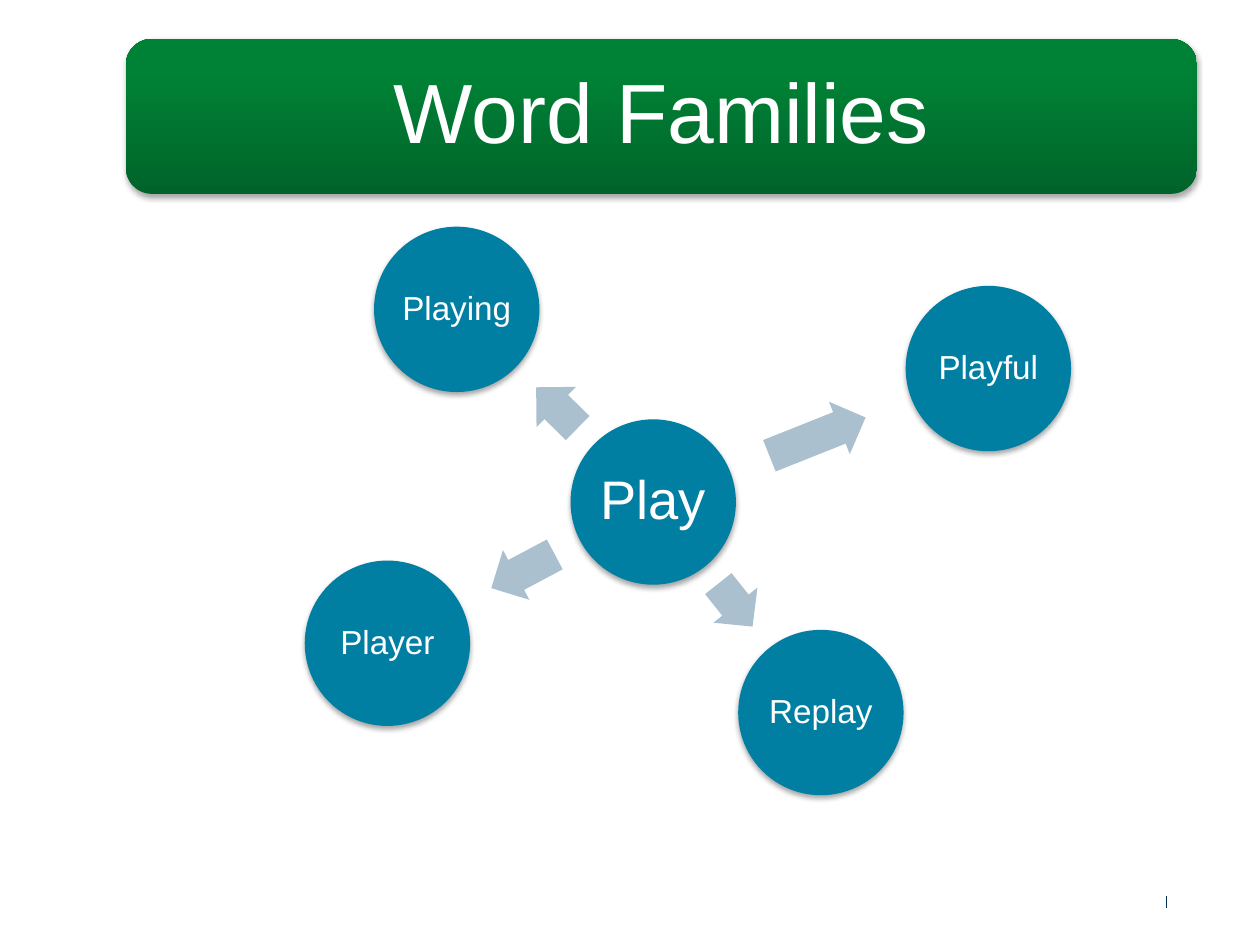
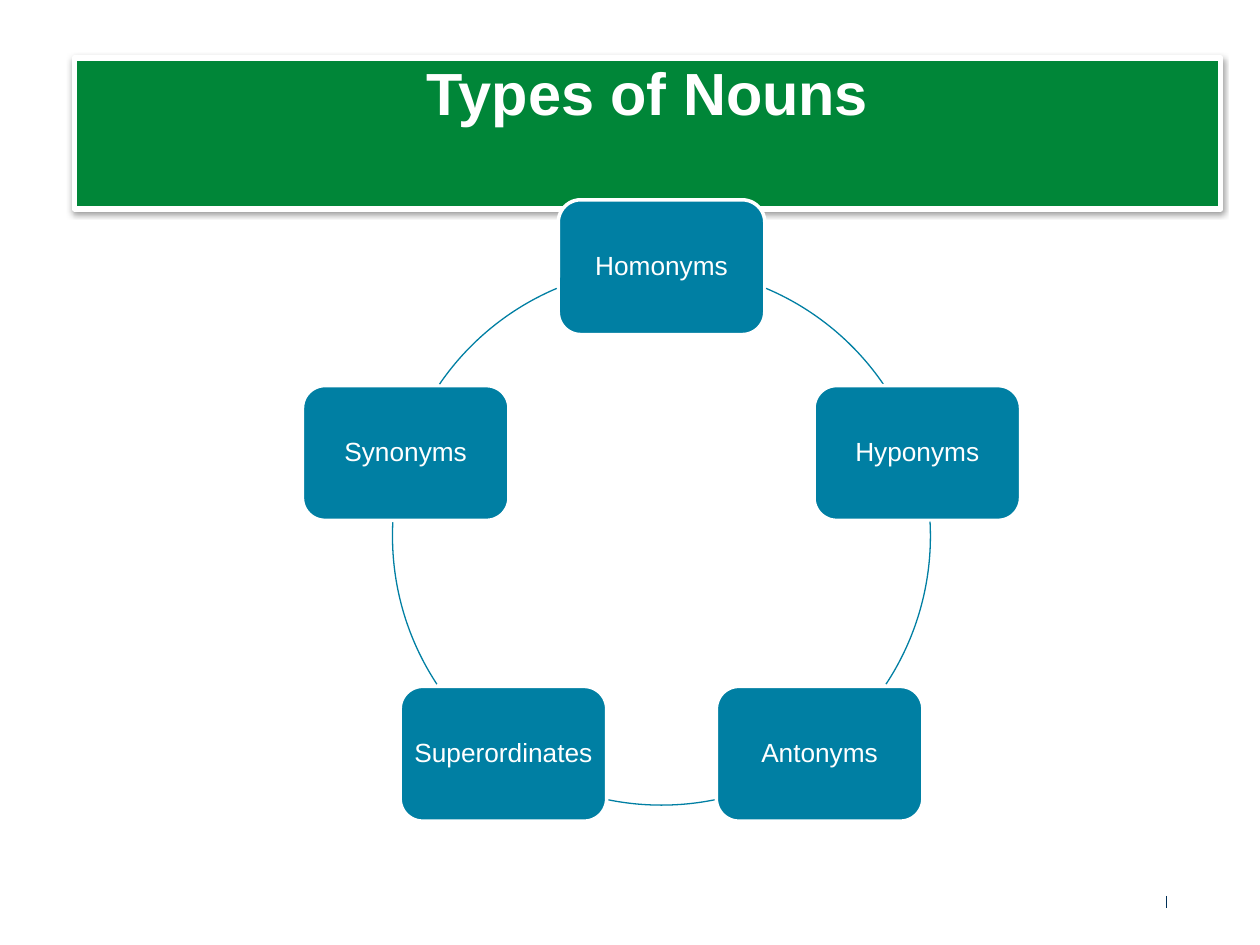
from math import atan2, cos, degrees, dist, radians, sin

from lxml.etree import SubElement
from pptx import Presentation
from pptx.dml.color import RGBColor
from pptx.enum.shapes import MSO_CONNECTOR, MSO_SHAPE
from pptx.enum.text import MSO_ANCHOR, PP_ALIGN
from pptx.oxml.ns import qn
from pptx.util import Pt

FONT = "Arial"
COLORS = {
    "white": "FFFFFF",
    "navy": "003057",
    "teal": "007FA3",
    "arrow": "ABC0CE",
    "green": "008638",
    "banner_top": "008236",
    "banner_bottom": "00642A",
    "shadow": "000000",
}

# Slide 1: a hub word and its family, with the centre of each circle
FAMILY_TITLE = "Word Families"
HUB = ("Play", (373.3, 286.9))
FAMILY = [
    ("Playing", (261, 176.8)),
    ("Playful", (564.8, 210.6)),
    ("Replay", (469.1, 407.2)),
    ("Player", (221.4, 367.6)),
]
CIRCLE = 94.5
ARROW_HEIGHT = 32.2

# Slide 2: a ring of boxes, clockwise from the top
NOUN_TITLE = "Types of Nouns"
NOUNS = ["Homonyms", "Hyponyms", "Antonyms", "Superordinates", "Synonyms"]
RING_CENTER = (378, 306.4)
RING_RADIUS = 153.7
BOX = (118, 77)
# Visible arc after each box, in degrees clockwise from three o'clock
ARCS = [(-67.1, -34.4), (-3.1, 33.4), (78.6, 101.4), (146.6, 183.1), (214.4, 247.1)]


def rgb(name):
    return RGBColor.from_string(COLORS[name])


def add_shape(slide, kind, box, fill=None, line=None, width=0):
    sp = slide.shapes.add_shape(kind, *(Pt(v) for v in box))
    sp.shadow.inherit = False
    if fill:
        sp.fill.solid()
        sp.fill.fore_color.rgb = rgb(fill)
    else:
        sp.fill.background()
    if line:
        sp.line.color.rgb = rgb(line)
        sp.line.width = Pt(width)
    else:
        sp.line.fill.background()
    return sp


def centered(center, width, height):
    """Box of the given size around a centre point."""
    return center[0] - width / 2, center[1] - height / 2, width, height


def add_shadow(sp, opacity, distance):
    effects = sp._element.spPr.find(qn("a:effectLst"))
    shadow = SubElement(effects, qn("a:outerShdw"), blurRad=str(Pt(3.1)),
                        dist=str(Pt(distance)), dir="5400000", rotWithShape="0")
    color = SubElement(shadow, qn("a:srgbClr"), val=COLORS["shadow"])
    SubElement(color, qn("a:alpha"), val=str(opacity * 1000))


def set_text(sp, text, size, spacing=0.9, anchor=MSO_ANCHOR.MIDDLE, bold=False):
    tf = sp.text_frame
    tf.word_wrap = False
    tf.vertical_anchor = anchor
    tf.margin_left = tf.margin_right = tf.margin_top = tf.margin_bottom = 0
    p = tf.paragraphs[0]
    p.text = text
    p.alignment = PP_ALIGN.CENTER
    p.line_spacing = spacing
    p.font.name = FONT
    p.font.size = Pt(size)
    p.font.bold = bold
    p.font.color.rgb = rgb("white")


def new_slide(prs):
    """Blank slide with the short footer rule."""
    slide = prs.slides.add_slide(prs.slide_layouts[6])
    x = Pt(666.7)
    rule = slide.shapes.add_connector(MSO_CONNECTOR.STRAIGHT, x, Pt(512), x, Pt(519))
    rule.line.color.rgb = rgb("navy")
    rule.line.width = Pt(0.5)
    SubElement(rule._element.spPr, qn("a:effectLst"))
    return slide


def add_circle(slide, text, center, size):
    sp = add_shape(slide, MSO_SHAPE.OVAL, centered(center, CIRCLE, CIRCLE), "teal")
    add_shadow(sp, 35, 1.8)
    set_text(sp, text, size)


def add_arrow(slide, start, end):
    """Block arrow in the gap between two circles."""
    length = 0.53 * (dist(start, end) - CIRCLE)
    middle = [a + 0.49 * (b - a) for a, b in zip(start, end)]
    sp = add_shape(slide, MSO_SHAPE.RIGHT_ARROW,
                   centered(middle, length, ARROW_HEIGHT), "arrow")
    sp.adjustments[0] = 0.6
    sp.rotation = degrees(atan2(end[1] - start[1], end[0] - start[0])) % 360


def build_word_families(prs):
    slide = new_slide(prs)
    banner = add_shape(slide, MSO_SHAPE.ROUNDED_RECTANGLE, (72, 22.3, 612, 88.5))
    banner.fill.gradient()
    banner.fill.gradient_angle = 90
    bottom, top = banner.fill.gradient_stops
    bottom.color.rgb = rgb("banner_bottom")
    top.color.rgb = rgb("banner_top")
    top.position = 0.8
    add_shadow(banner, 35, 1.8)
    set_text(banner, FAMILY_TITLE, 48)

    hub_word, hub = HUB
    add_circle(slide, hub_word, hub, 31)
    for word, center in FAMILY:
        add_arrow(slide, hub, center)
        add_circle(slide, word, center, 19)


def build_noun_types(prs):
    slide = new_slide(prs)
    banner = add_shape(slide, MSO_SHAPE.RECTANGLE, (42.5, 33.1, 655.2, 86.4),
                       "green", "white", 3)
    add_shadow(banner, 38, 1.6)
    set_text(banner, NOUN_TITLE, 34, Pt(40), MSO_ANCHOR.TOP, bold=True)

    ring = centered(RING_CENTER, 2 * RING_RADIUS, 2 * RING_RADIUS)
    for i, (noun, angles) in enumerate(zip(NOUNS, ARCS)):
        turn = radians(i * 360 / len(NOUNS) - 90)
        center = (RING_CENTER[0] + RING_RADIUS * cos(turn),
                  RING_CENTER[1] + RING_RADIUS * sin(turn))
        box = add_shape(slide, MSO_SHAPE.ROUNDED_RECTANGLE, centered(center, *BOX),
                        "teal", "white", 2)
        set_text(box, noun, 15)
        arc = add_shape(slide, MSO_SHAPE.ARC, ring, line="teal", width=0.75)
        for k, angle in enumerate(angles):
            arc.adjustments[k] = angle % 360 * 0.6  # 60000 units a degree, over 100000


def main():
    prs = Presentation()
    prs.slide_width, prs.slide_height = Pt(720), Pt(540)
    build_word_families(prs)
    build_noun_types(prs)
    prs.save("out.pptx")


if __name__ == "__main__":
    main()
